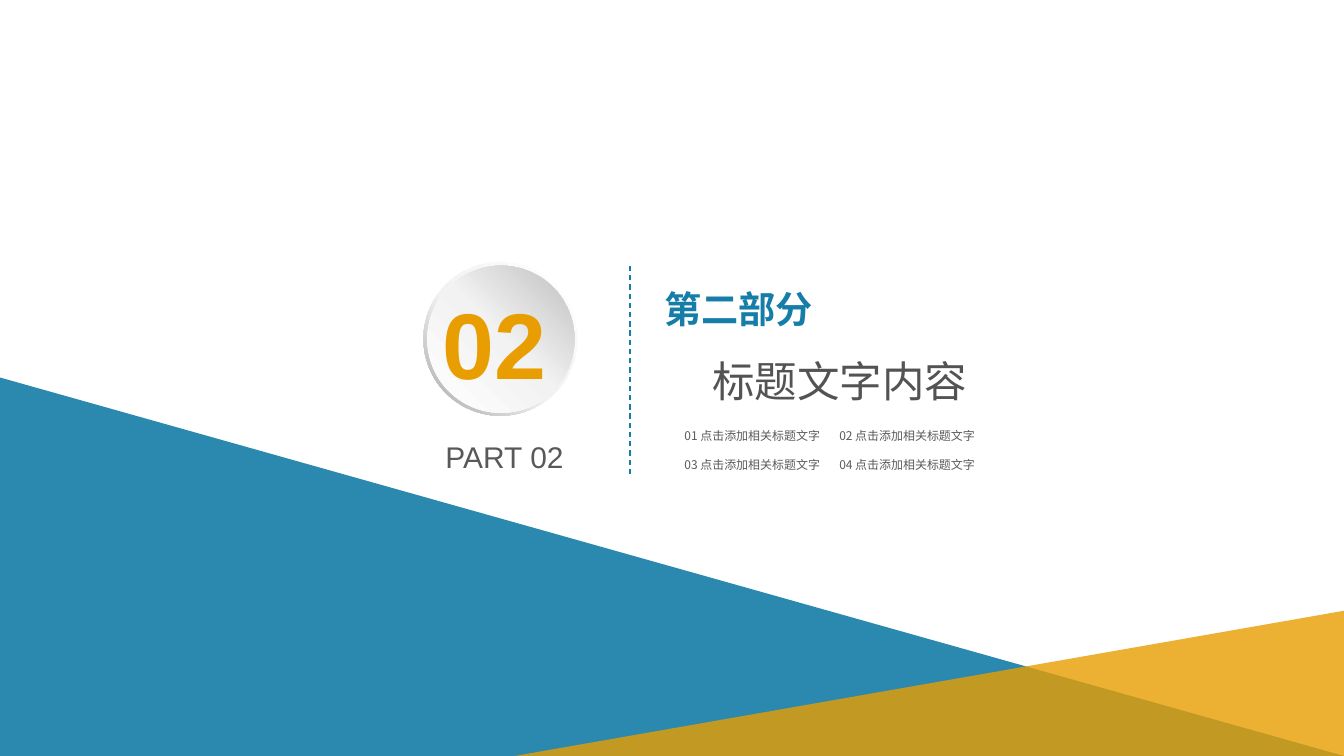
from copy import deepcopy

from pptx import Presentation
from pptx.dml.color import RGBColor
from pptx.enum.dml import MSO_LINE
from pptx.enum.shapes import MSO_CONNECTOR, MSO_SHAPE
from pptx.enum.text import MSO_ANCHOR, MSO_AUTO_SIZE, PP_ALIGN
from pptx.oxml.ns import qn
from pptx.util import Inches, Pt
from lxml.etree import SubElement as Sub

# Content
TITLE = "标题文字内容"
LABEL = "第二部分"
PART = "PART 02"
NUMBER = "02"
TOPICS = [
    "01 点击添加相关标题文字",
    "02 点击添加相关标题文字",
    "03 点击添加相关标题文字",
    "04 点击添加相关标题文字",
]

# Style
HEX = {
    "blue": "157DA8", "gold": "E89E00", "dark": "535353", "grey": "595959",
    "white": "FFFFFF", "pale": "F2F2F2", "silver": "BFBFBF", "steel": "A6A6A6",
}
HAN, LATIN = "Noto Sans CJK SC", "Arial"
WIDE, HIGH = 14.06, 7.91

# Triangles: corner points, colour, opacity in percent
WEDGES = [
    ([(0, 3.95), (WIDE, HIGH), (0, HIGH)], "blue", 90),
    ([(WIDE, 6.39), (5.38, HIGH), (WIDE, HIGH)], "gold", 80),
]
# Badge: preset, left, top, size, clockwise angle, stops
BADGE = [
    (MSO_SHAPE.DONUT, 4.43, 2.74, 1.61, 135,
     [(0, "white"), (0.55, "pale"), (1, "steel")]),
    (MSO_SHAPE.OVAL, 4.47, 2.78, 1.54, 315,
     [(0, "white"), (0.51, "pale"), (1, "silver")]),
]

deck = Presentation()
deck.slide_width, deck.slide_height = Inches(WIDE), Inches(HIGH)
slide = deck.slides.add_slide(deck.slide_layouts[5])
shapes = slide.shapes


def color(name):
    return RGBColor.from_string(HEX[name])


def write(text, left, top, width, height, size=9, font=HAN, tint="grey",
          bold=False, anchor=MSO_ANCHOR.TOP, box=None):
    spot = [Inches(n) for n in (left, top, width, height)]
    if box is None:
        box = shapes.add_textbox(*spot)
    else:
        box.left, box.top, box.width, box.height = spot
    frame = box.text_frame
    frame.word_wrap = True
    frame.auto_size = MSO_AUTO_SIZE.NONE
    frame.vertical_anchor = anchor
    frame.margin_left = frame.margin_right = 0
    frame.margin_top = frame.margin_bottom = 0
    para = frame.paragraphs[0]
    para.alignment = PP_ALIGN.LEFT
    run = para.add_run()
    run.text = text
    run.font.size, run.font.bold = Pt(size), bold
    run.font.name = font
    run.font.color.rgb = color(tint)
    Sub(run.font._element, qn("a:ea")).set("typeface", font)


# Background triangles
for points, tint, alpha in WEDGES:
    start, *rest = [(Inches(x), Inches(y)) for x, y in points]
    path = shapes.build_freeform(*start, scale=1.0)
    path.add_line_segments(rest, close=True)
    wedge = path.convert_to_shape()
    wedge.shadow.inherit = False
    wedge.line.fill.background()
    wedge.fill.solid()
    wedge.fill.fore_color.rgb = color(tint)
    fill = next(wedge._element.spPr.iter(qn("a:srgbClr")))
    Sub(fill, qn("a:alpha")).set("val", str(alpha * 1000))

# Round badge
for kind, left, top, size, angle, stops in BADGE:
    disc = shapes.add_shape(kind, Inches(left), Inches(top),
                            Inches(size), Inches(size))
    if kind == MSO_SHAPE.DONUT:
        disc.adjustments[0] = 0.05
    disc.shadow.inherit = False
    disc.line.fill.background()
    disc.fill.gradient()
    disc.fill.gradient_angle = 360 - angle
    marks = next(disc._element.spPr.iter(qn("a:gsLst")))
    marks.insert(1, deepcopy(marks[0]))
    for stop, (place, tint) in zip(disc.fill.gradient_stops, stops):
        stop.position, stop.color.rgb = place, color(tint)

# Dashed divider
rule = shapes.add_connector(MSO_CONNECTOR.STRAIGHT, Inches(6.59),
                            Inches(4.96), Inches(6.59), Inches(2.78))
rule.line.color.rgb = color("blue")
rule.line.width = Pt(1)
rule.line.dash_style = MSO_LINE.DASH
Sub(rule._element.spPr, qn("a:effectLst"))

# Part number and headings
write(NUMBER, 4.63, 2.99, 1.39, 1.18, size=70.3, font=LATIN, tint="gold",
      bold=True)
write(PART, 4.66, 4.59, 1.39, 0.38, size=22.5, font=LATIN)
write(LABEL, 6.95, 2.95, 1.8, 0.56, size=28, tint="blue", bold=True,
      anchor=MSO_ANCHOR.MIDDLE)
write(TITLE, 7.45, 3.66, 2.9, 0.64, size=32, tint="dark",
      anchor=MSO_ANCHOR.MIDDLE, box=shapes.title)

# Topics in a two by two grid
for i, topic in enumerate(TOPICS):
    row, col = divmod(i, 2)
    write(topic, 7.16 + 1.62 * col, 4.48 + 0.31 * row, 1.55, 0.2)

deck.save("out.pptx")
